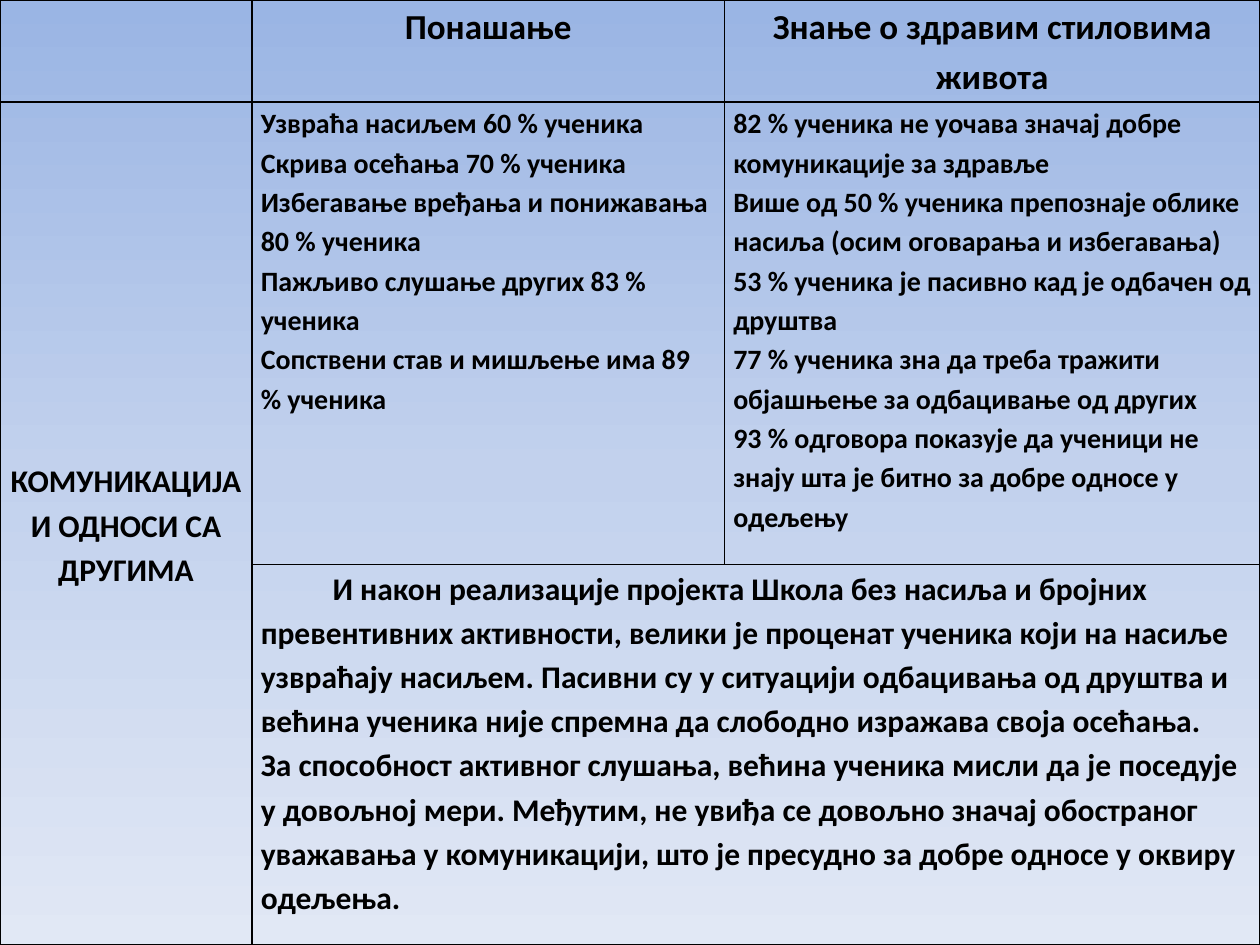
from copy import deepcopy
from dataclasses import dataclass

from lxml.etree import SubElement
from pptx import Presentation
from pptx.dml.color import RGBColor
from pptx.enum.text import MSO_ANCHOR, PP_ALIGN
from pptx.oxml.ns import qn
from pptx.util import Inches, Pt


@dataclass(frozen=True)
class Theme:
    font: str = "Calibri"
    ink: str = "000000"
    sky: tuple = ((0, "9AB5E4"), (0.5, "C2D1ED"), (1, "E1E8F5"))
    head: int = 20
    body: int = 18
    small: int = 16
    spacing: float = 1.15
    rule: float = 1


THEME = Theme()
COLS = (2, 3.75, 4.25)
ROWS = (0.81, 3.67, 3.02)

HEADS = ("Понашање", "Знање о здравим стиловима живота")
TOPIC = "КОМУНИКАЦИЈА И ОДНОСИ СА ДРУГИМА"
HABITS = (
    "Узвраћа насиљем 60 % ученика",
    "Скрива осећања 70 % ученика",
    "Избегавање вређања и понижавања 80 % ученика",
    "Пажљиво слушање других 83 % ученика",
    "Сопствени став и мишљење има 89 % ученика",
)
FACTS = (
    "82 % ученика не уочава значај добре комуникације за здравље",
    "Више од 50 % ученика препознаје облике насиља (осим оговарања и избегавања)",
    "53 % ученика је пасивно кад је одбачен од друштва",
    "77 % ученика зна да треба тражити објашњење за одбацивање од других",
    "93 % одговора показује да ученици не знају шта је битно за добре односе у одељењу",
)
SUMMARY = (
    "И након реализације пројекта Школа без насиља и бројних превентивних "
    "активности, велики је проценат ученика који на насиље узвраћају насиљем. "
    "Пасивни су у ситуацији одбацивања од друштва и већина ученика није спремна "
    "да слободно изражава своја осећања.",
    "За способност активног слушања, већина ученика мисли да је поседује у "
    "довољној мери. Међутим, не увиђа се довољно значај обостраног уважавања у "
    "комуникацији, што је пресудно за добре односе у оквиру одељења.",
)


def write(cell, *lines, size=THEME.body, align=PP_ALIGN.LEFT,
          anchor=MSO_ANCHOR.TOP, indent=0):
    """Fill a cell with paragraphs; indent applies to the first one."""
    cell.vertical_anchor = anchor
    frame = cell.text_frame
    for i, line in enumerate(lines):
        para = frame.add_paragraph() if i else frame.paragraphs[0]
        if indent and not i:
            para._p.get_or_add_pPr().set("indent", str(Inches(indent)))
        para.alignment = align
        para.line_spacing = THEME.spacing
        run = para.add_run()
        run.text = line
        run.font.name = THEME.font
        run.font.size = Pt(size)
        run.font.bold = True
        run.font.color.rgb = RGBColor.from_string(THEME.ink)


def frame_cell(cell):
    """Clear the fill, set the margins and rule all four sides."""
    cell.margin_left = cell.margin_right = Inches(0.07)
    cell.margin_top = cell.margin_bottom = 0
    props = cell._tc.get_or_add_tcPr()
    for side in "LRTB":
        line = SubElement(props, qn(f"a:ln{side}"), w=str(Pt(THEME.rule)))
        fill = SubElement(line, qn("a:solidFill"))
        SubElement(fill, qn("a:srgbClr"), val=THEME.ink)
    cell.fill.background()


def paint_sky(slide):
    fill = slide.background.fill
    fill.gradient()
    fill.gradient_angle = 270
    stops = next(slide.element.iter(qn("a:gsLst")))
    stops.insert(1, deepcopy(stops[0]))
    for stop, (place, color) in zip(fill.gradient_stops, THEME.sky):
        stop.position = place
        stop.color.rgb = RGBColor.from_string(color)


def add_grid(slide, left, top, width, height):
    box = (Inches(n) for n in (left, top, width, height))
    table = slide.shapes.add_table(len(ROWS), len(COLS), *box).table
    table.first_row = table.horz_banding = False
    for col, share in zip(table.columns, COLS):
        col.width = Inches(width * share / sum(COLS))
    for row, share in zip(table.rows, ROWS):
        row.height = Inches(height * share / sum(ROWS))
    for cell in table.iter_cells():
        frame_cell(cell)
    table.cell(1, 0).merge(table.cell(2, 0))
    table.cell(2, 1).merge(table.cell(2, 2))

    for i, head in enumerate(HEADS, 1):
        write(table.cell(0, i), head, size=THEME.head, align=PP_ALIGN.CENTER)
    write(table.cell(1, 0), TOPIC, align=PP_ALIGN.CENTER,
          anchor=MSO_ANCHOR.MIDDLE)
    for i, lines in enumerate((HABITS, FACTS), 1):
        write(table.cell(1, i), *lines, size=THEME.small)
    write(table.cell(2, 1), *SUMMARY, indent=0.57)


def main():
    deck = Presentation()
    deck.slide_width, deck.slide_height = Inches(10), Inches(7.5)
    slide = deck.slides.add_slide(deck.slide_layouts[6])
    paint_sky(slide)
    add_grid(slide, 0, 0, 10, 7.5)
    deck.save("out.pptx")


if __name__ == "__main__":
    main()
